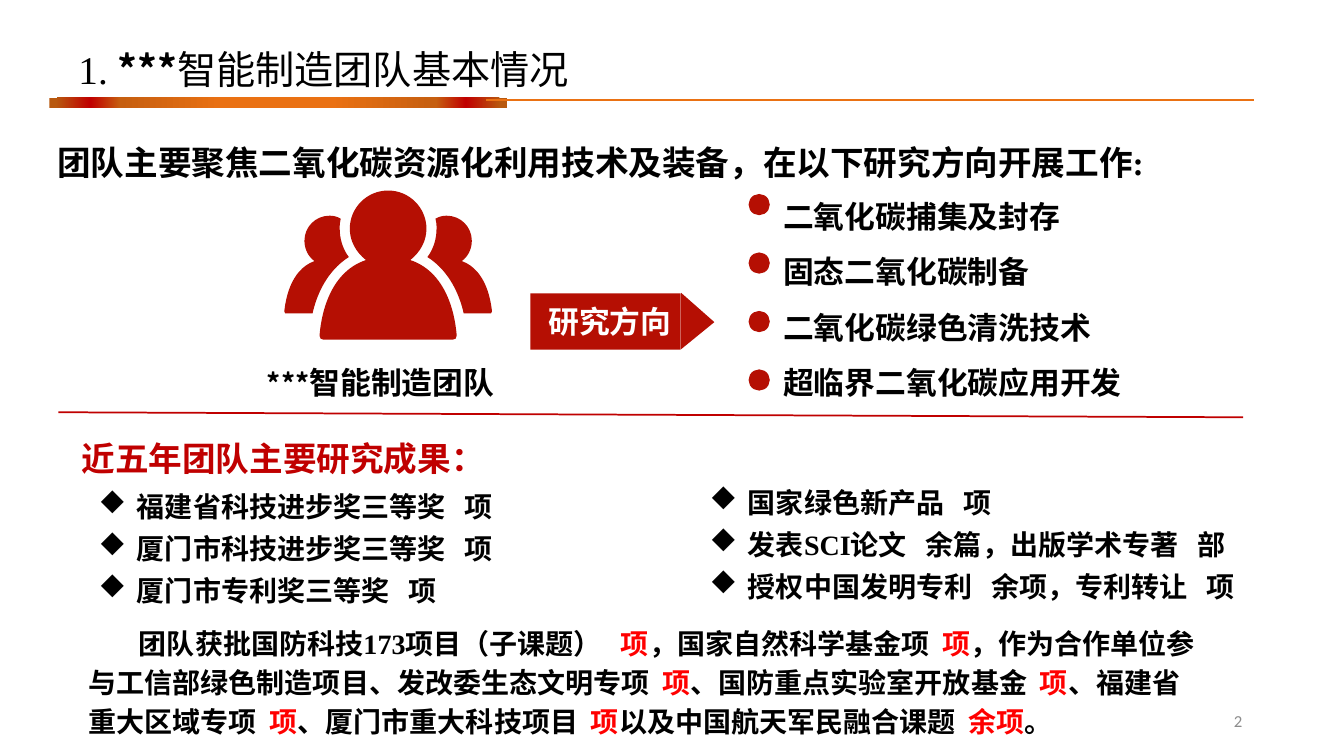
from dataclasses import dataclass

from lxml import etree
from pptx import Presentation
from pptx.dml.color import RGBColor
from pptx.enum.shapes import MSO_CONNECTOR, MSO_SHAPE
from pptx.enum.text import MSO_ANCHOR, PP_ALIGN
from pptx.oxml import parse_xml
from pptx.oxml.ns import qn
from pptx.util import Inches, Pt

LEFT, CENTER, RIGHT = PP_ALIGN.LEFT, PP_ALIGN.CENTER, PP_ALIGN.RIGHT
TOP, MIDDLE = MSO_ANCHOR.TOP, MSO_ANCHOR.MIDDLE
RECT, OVAL, TRIANGLE = MSO_SHAPE.RECTANGLE, MSO_SHAPE.OVAL, MSO_SHAPE.ISOSCELES_TRIANGLE
STRAIGHT = MSO_CONNECTOR.STRAIGHT
DRAW_NS = "http://schemas.openxmlformats.org/drawingml/2006/main"


@dataclass(frozen=True)
class Theme:
    black: str = "000000"
    white: str = "FFFFFF"
    gray: str = "8C8C8C"
    brick: str = "B50F03"
    crimson: str = "C00000"
    red: str = "FF0000"
    orange: str = "EA7113"
    bar: tuple = ((0, "EA7113"), (23, "EA7113"), (69, "C65F10"), (82, "C00000"), (97, "B8590F"))
    title: int = 28
    head: int = 24
    label: int = 22
    body: int = 20
    small: int = 12
    serif: str = "Times New Roman"
    sans: str = "Noto Sans CJK SC"
    plain: str = "Calibri"


THEME = Theme()


@dataclass(frozen=True)
class Span:
    text: str
    size: int = THEME.body
    color: str = THEME.black
    font: str = THEME.serif
    bold: bool = True
    track: int = 0


@dataclass(frozen=True)
class Block:
    box: tuple
    lines: list
    align: PP_ALIGN = LEFT
    space: float | Pt | None = None
    indent: float = 0
    bullet: bool = False
    wrap: bool = True
    anchor: MSO_ANCHOR = TOP


@dataclass(frozen=True)
class Rule:
    start: tuple
    end: tuple
    color: str
    width: float


@dataclass(frozen=True)
class Outline:
    points: list
    sizes: list


def label(text: str, **style) -> list[list[Span]]:
    """Return a single line made of one span."""
    return [[Span(text, **style)]]


def gapped(text: str) -> list[Span]:
    """Split a line at its spaces and widen each space into a blank to fill in."""
    first, *rest = text.split(" ")
    return [Span(first)] + [s for part in rest for s in (Span(" ", track=900), Span(part))]


def funding(pairs: list[tuple[str, str]]) -> list[Span]:
    """Join black grant names with red counts, leaving a blank before each count."""
    spans = []
    for spot, (name, count) in enumerate(pairs):
        blank = Span(" ", track=450 if spot else 900)
        spans += [Span(name), blank, Span(count, color=THEME.red)]
    return spans + [Span("。")]


def add_text(slide, block: Block) -> None:
    """Draw a text block."""
    frame = slide.shapes.add_textbox(*map(Inches, block.box)).text_frame
    frame.word_wrap = block.wrap
    frame.vertical_anchor = block.anchor
    for spot, spans in enumerate(block.lines):
        para = frame.add_paragraph() if spot else frame.paragraphs[0]
        para.alignment = block.align
        if block.space:
            para.line_spacing = block.space
        props = para._p.get_or_add_pPr()
        props.set("marL", str(Inches(block.indent) if block.bullet else 0))
        props.set("indent", str(Inches(-block.indent if block.bullet else block.indent)))
        if block.bullet:
            etree.SubElement(props, qn("a:buFont")).set("typeface", "Wingdings")
            etree.SubElement(props, qn("a:buChar")).set("char", "u")
        for span in spans:
            run = para.add_run()
            run.text = span.text
            font = run.font
            font.size, font.bold, font.name = Pt(span.size), span.bold, span.font
            font.color.rgb = RGBColor.from_string(span.color)
            east = etree.SubElement(font._element, qn("a:ea"))
            east.set("typeface", THEME.sans)
            if span.track:
                font._element.set("spc", str(span.track))


def paint(shape, color: str) -> None:
    """Give a shape a flat fill without line or shadow."""
    shape.shadow.inherit = False
    shape.fill.solid()
    shape.fill.fore_color.rgb = RGBColor.from_string(color)
    shape.line.fill.background()


def add_shape(slide, kind: MSO_SHAPE, box: tuple, color: str = THEME.brick):
    """Draw a flat preset shape."""
    shape = slide.shapes.add_shape(kind, *map(Inches, box))
    paint(shape, color)
    return shape


def add_bar(slide, box: tuple) -> None:
    """Draw the title bar with its radial gradient."""
    bar = add_shape(slide, RECT, box, THEME.orange)
    stops = "".join(f'<a:gs pos="{at * 1000}"><a:srgbClr val="{color}"/></a:gs>' for at, color in THEME.bar)
    grad = parse_xml(
        f'<a:gradFill xmlns:a="{DRAW_NS}" rotWithShape="1"><a:gsLst>{stops}</a:gsLst><a:path path="circle">'
        '<a:fillToRect l="50000" t="50000" r="50000" b="50000"/></a:path></a:gradFill>')
    props = bar._element.spPr
    props.replace(props.find(qn("a:solidFill")), grad)


def add_rule(slide, rule: Rule) -> None:
    """Draw a straight line."""
    line = slide.shapes.add_connector(STRAIGHT, *map(Inches, rule.start + rule.end))
    line.line.color.rgb = RGBColor.from_string(rule.color)
    line.line.width = Pt(rule.width)
    etree.SubElement(line._element.spPr, qn("a:effectLst"))


def add_team(slide, middle: float) -> None:
    """Draw three people as cubic curves, symmetric about a middle line."""
    def flip(points):
        return [(2 * middle - x, y) for x, y in points]

    leader = HALF.points + flip(HALF.points)[::-1]
    rings = [[(Inches(x), Inches(y)) for x, y in ring] for ring in (SIDE.points, flip(SIDE.points), leader)]
    pen = slide.shapes.build_freeform(*rings[0][0])
    for spot, ring in enumerate(rings):
        if spot:
            pen.move_to(*ring[0])
        pen.add_line_segments(ring[1:], close=True)
    team = pen.convert_to_shape()
    paint(team, THEME.brick)
    edges = iter(list(team._element.iter(qn("a:lnTo"))))
    for size in SIDE.sizes * 2 + HALF.sizes + [1] + HALF.sizes[::-1]:
        group = [next(edges) for _ in range(size)]
        if size == 3:
            curve = etree.Element(qn("a:cubicBezTo"))
            group[0].addprevious(curve)
            for edge in group:
                curve.append(edge[0])
                edge.getparent().remove(edge)


SIDE = Outline([
    (4.43, 2.14), (4.57, 2.14), (4.68, 2.25), (4.68, 2.39), (4.68, 2.47), (4.64, 2.55), (4.58, 2.59),
    (4.83, 2.68), (4.87, 3), (4.88, 3.09), (4.88, 3.1), (4.88, 3.1), (4.87, 3.11), (4.6, 3.11),
    (4.56, 2.93), (4.46, 2.69), (4.24, 2.55), (4.3, 2.47), (4.33, 2.37), (4.33, 2.27),
    (4.33, 2.23), (4.33, 2.2), (4.32, 2.17), (4.35, 2.15), (4.39, 2.14), (4.43, 2.14)],
    [3, 3, 3, 3, 1, 3, 3, 3, 3])
HALF = Outline([
    (3.85, 1.89), (4.06, 1.89), (4.23, 2.06), (4.23, 2.27), (4.23, 2.39), (4.17, 2.5), (4.07, 2.58),
    (4.46, 2.71), (4.52, 3.19), (4.53, 3.33), (4.53, 3.34), (4.53, 3.35), (4.52, 3.36),
    (4.51, 3.36), (4.5, 3.37), (4.49, 3.37)], [3] * 5)
TOPICS = ["二氧化碳捕集及封存", "固态二氧化碳制备", "二氧化碳绿色清洗技术", "超临界二氧化碳应用开发"]
AWARDS = ["福建省科技进步奖三等奖 项", "厦门市科技进步奖三等奖 项", "厦门市专利奖三等奖 项"]
OUTPUT = ["国家绿色新产品 项", "发表SCI论文 余篇，出版学术专著 部", "授权中国发明专利 余项，专利转让 项"]
GRANTS = [("团队获批国防科技173项目（子课题）", "项"), ("，国家自然科学基金项", "项"),
          ("，作为合作单位参与工信部绿色制造项目、发改委生态文明专项", "项"),
          ("、国防重点实验室开放基金", "项"), ("、福建省重大区域专项", "项"),
          ("、厦门市重大科技项目", "项"), ("以及中国航天军民融合课题", "余项")]
BLOCKS = [
    Block((9.42, 6.95, 3, 0.4), label("2", size=THEME.small, color=THEME.gray, font=THEME.plain, bold=False),
          RIGHT, anchor=MIDDLE),
    Block((0.02, 1.16, 12.8, 0.71), [[Span("团队", THEME.head, font=THEME.sans), Span(
        "主要聚焦二氧化碳资源化利用技术及装备，在以下研究方向开展工作:", THEME.head)]], space=1.5, indent=0.45),
    Block((1.71, 3.56, 4.13, 0.47), [[Span("***", font=THEME.sans), Span("智能制造团队", THEME.label)]], CENTER),
    Block((5.33, 2.95, 1.44, 0.47), label("研究方向", size=THEME.label, color=THEME.white), CENTER, wrap=False),
    Block((7.67, 1.73, 3.58, 2.33), [[Span(topic, THEME.label)] for topic in TOPICS], space=1.5, wrap=False),
    Block((0.68, 0.4, 7.48, 0.57), [[Span("1. ", THEME.title, bold=False), Span(
        "***", THEME.title, font=THEME.sans), Span("智能制造团队基本情况", THEME.title, bold=False)]]),
    Block((0.88, 4.72, 6.75, 1.36), list(map(gapped, AWARDS)), space=1.25, indent=0.38, bullet=True),
    Block((6.94, 4.68, 6.63, 1.36), list(map(gapped, OUTPUT)), space=1.25, indent=0.38, bullet=True),
    Block((0.71, 4.3, 6.89, 0.5), label("近五年团队主要研究成果：", size=THEME.head, color=THEME.crimson)),
    Block((0.78, 6.11, 11.28, 1.28), [funding(GRANTS)], space=Pt(28), indent=0.5),
]
RULES = [Rule((4.82, 0.99), (12.44, 0.99), THEME.orange, 1.5),
         Rule((12.33, 4.14), (0.58, 4.09), THEME.crimson, 1.25)]


def main() -> None:
    """Build the team overview slide."""
    deck = Presentation()
    deck.slide_width, deck.slide_height = Inches(13.33), Inches(7.5)
    slide = deck.slides.add_slide(deck.slide_layouts[6])
    add_team(slide, 3.85)
    add_shape(slide, RECT, (5.26, 2.91, 1.49, 0.56))
    tip = add_shape(slide, TRIANGLE, (6.64, 3.02, 0.56, 0.33))
    tip.rotation = 90
    tip.adjustments[0] = 0.52
    for row in range(len(TOPICS)):
        dot = add_shape(slide, OVAL, (7.43, 1.93 + 0.58 * row, 0.2, 0.2))
        dot.line.color.rgb = RGBColor.from_string(THEME.brick)
        dot.line.width = Pt(0.75)
    add_bar(slide, (0.49, 0.97, 4.54, 0.1))
    for rule in RULES:
        add_rule(slide, rule)
    for block in BLOCKS:
        add_text(slide, block)
    deck.save("out.pptx")


if __name__ == "__main__":
    main()
